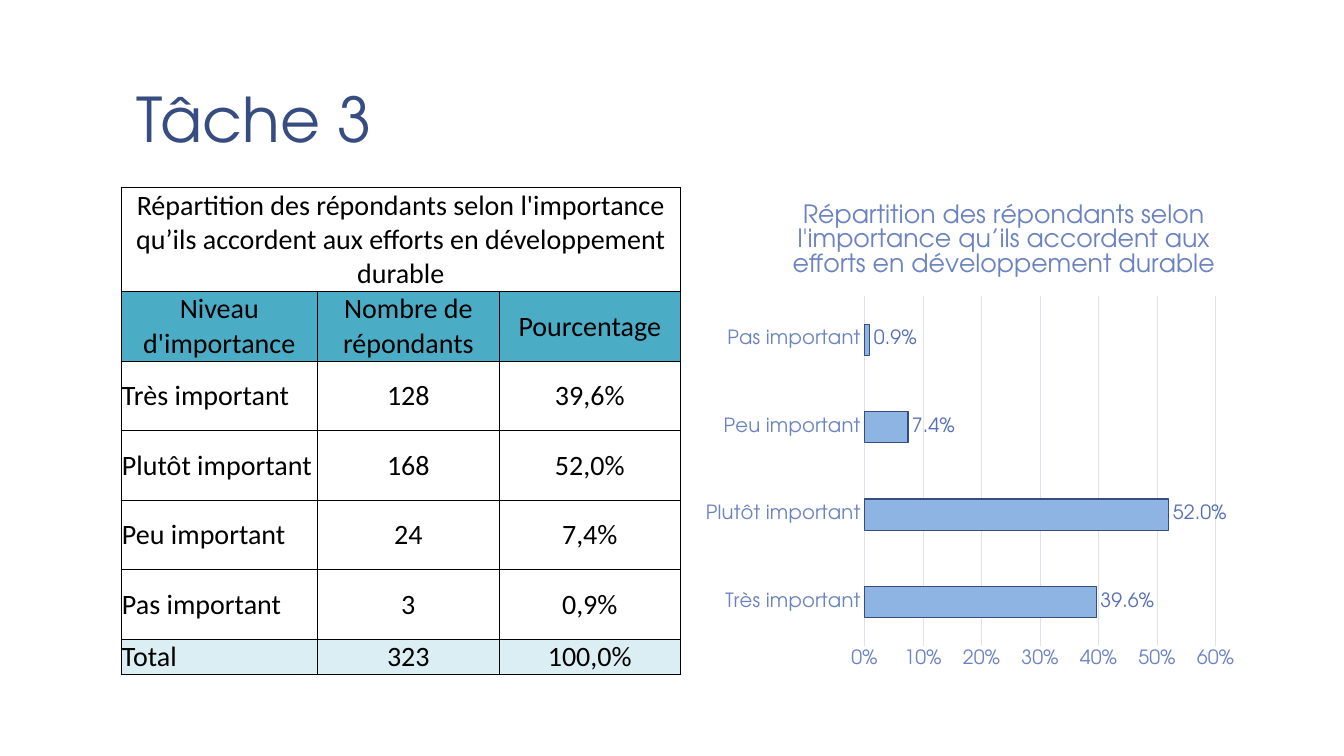
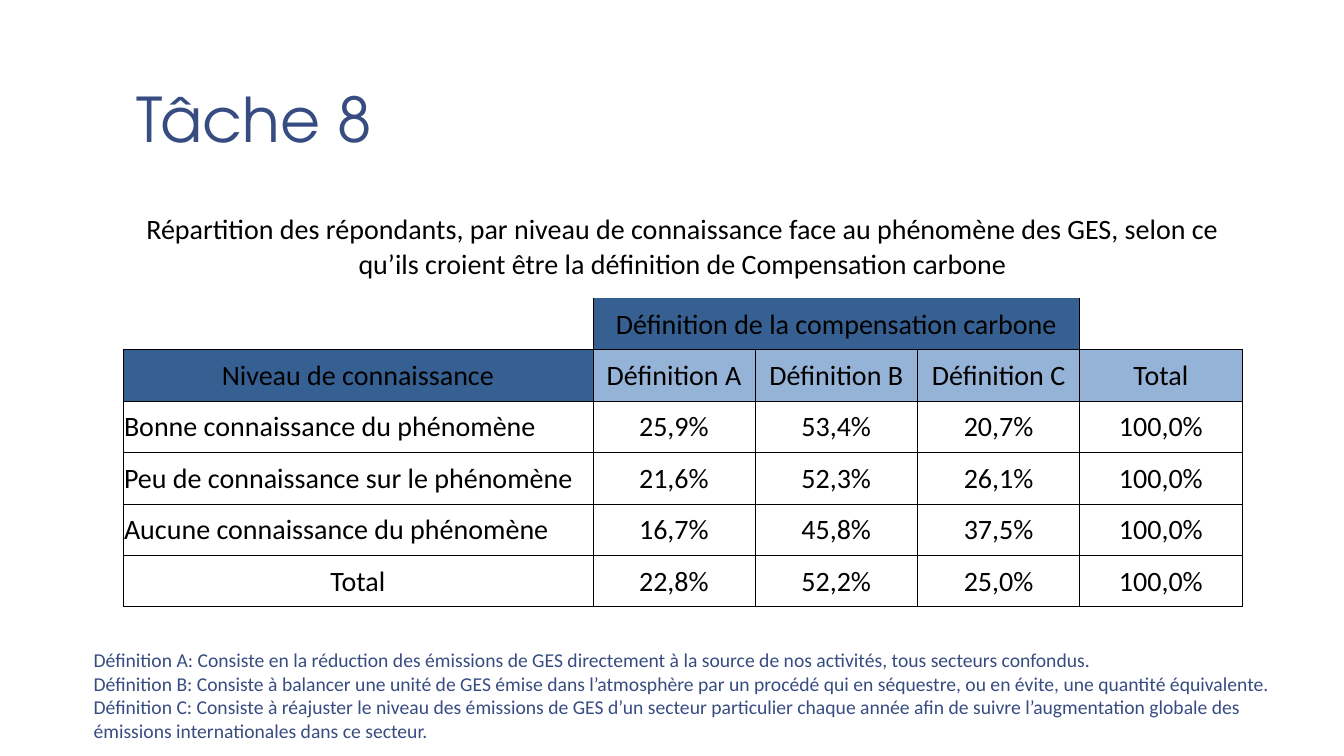
from lxml import etree
from pptx import Presentation
from pptx.chart.data import CategoryChartData
from pptx.dml.color import RGBColor
from pptx.enum.chart import XL_CHART_TYPE, XL_LABEL_POSITION, XL_TICK_MARK
from pptx.enum.text import MSO_ANCHOR, PP_ALIGN
from pptx.oxml.ns import qn
from pptx.util import Inches, Pt

BAR_CLUSTERED = XL_CHART_TYPE.BAR_CLUSTERED
OUTSIDE_END = XL_LABEL_POSITION.OUTSIDE_END
NO_TICK = XL_TICK_MARK.NONE
MIDDLE, BOTTOM = MSO_ANCHOR.MIDDLE, MSO_ANCHOR.BOTTOM
LEFT, CENTER = PP_ALIGN.LEFT, PP_ALIGN.CENTER

HEADING_FONT, BODY_FONT = "TeX Gyre Adventor", "Calibri"
NAVY, BLACK, WHITE = "374C81", "000000", "FFFFFF"
AXIS_TEXT, LABEL_TEXT, GRID, BAR = "6A83C0", "546FB6", "DDE2F0", "8EB4E3"
TEAL, PALE_TEAL = "4BACC6", "DAEEF3"
DEEP_BLUE, LIGHT_BLUE = "366092", "95B3D7"
ALL_EDGES = "LRTB"

IMPORTANCE_CAPTION = ("Répartition des répondants selon l'importance qu’ils accordent "
                      "aux efforts en développement durable")
IMPORTANCE_HEADER = ["Niveau d'importance", "Nombre de répondants", "Pourcentage"]
IMPORTANCE_ROWS = [
    ["Très important", "128", "39,6%"],
    ["Plutôt important", "168", "52,0%"],
    ["Peu important", "24", "7,4%"],
    ["Pas important", "3", "0,9%"],
]
IMPORTANCE_TOTAL = ["Total", "323", "100,0%"]
IMPORTANCE_SHARES = [0.396, 0.52, 0.074, 0.009]

KNOWLEDGE_CAPTION = ("Répartition des répondants, par niveau de connaissance face au phénomène "
                     "des GES, selon ce qu’ils croient être la définition de Compensation carbone")
KNOWLEDGE_HEADER = ["Niveau de connaissance", "Définition A", "Définition B",
                    "Définition C", "Total"]
KNOWLEDGE_ROWS = [
    ["Bonne connaissance du phénomène", "25,9%", "53,4%", "20,7%", "100,0%"],
    ["Peu de connaissance sur le phénomène", "21,6%", "52,3%", "26,1%", "100,0%"],
    ["Aucune connaissance du phénomène", "16,7%", "45,8%", "37,5%", "100,0%"],
]
KNOWLEDGE_TOTAL = ["Total", "22,8%", "52,2%", "25,0%", "100,0%"]
DEFINITIONS = [
    "Définition A: Consiste en la réduction des émissions de GES directement à la source "
    "de nos activités, tous secteurs confondus.",
    "Définition B: Consiste à balancer une unité de GES émise dans l’atmosphère par un procédé "
    "qui en séquestre, ou en évite, une quantité équivalente.",
    "Définition C: Consiste à réajuster le niveau des émissions de GES d’un secteur particulier "
    "chaque année afin de suivre l’augmentation globale des émissions internationales "
    "dans ce secteur.",
]


def rgb(color):
    return RGBColor.from_string(color)


def style_font(font, name, size, color):
    font.name, font.size, font.bold = name, Pt(size), False
    font.color.rgb = rgb(color)


def add_text(slide, box, lines, font_name, size, color):
    frame = slide.shapes.add_textbox(*map(Inches, box)).text_frame
    frame.word_wrap = True
    frame.text = "\n".join(lines)
    for paragraph in frame.paragraphs:
        style_font(paragraph.font, font_name, size, color)
    return frame


def add_titled_slide(prs, title):
    slide = prs.slides.add_slide(prs.slide_layouts[6])
    frame = add_text(slide, (1.22, 0.08, 11.11, 1.53), [title], HEADING_FONT, 44, NAVY)
    frame.vertical_anchor = BOTTOM
    frame.margin_left = frame.margin_right = Inches(0.13)
    frame.margin_top = frame.margin_bottom = Inches(0.07)
    frame.paragraphs[0].line_spacing = 0.85
    return slide


def set_borders(cell, edges):
    """Draw a thin black line on the given edges and none on the others."""
    properties = cell._tc.get_or_add_tcPr()
    for index, edge in enumerate(ALL_EDGES):
        line = etree.Element(qn(f"a:ln{edge}"), w=str(Pt(0.5)))
        if edge in edges:
            fill = etree.SubElement(line, qn("a:solidFill"))
            etree.SubElement(fill, qn("a:srgbClr"), val=BLACK)
        else:
            etree.SubElement(line, qn("a:noFill"))
        properties.insert(index, line)


def add_grid(slide, left, top, widths, heights):
    """Add a plain table without any banding."""
    table = slide.shapes.add_table(
        len(heights), len(widths), Inches(left), Inches(top),
        Inches(sum(widths)), Inches(sum(heights))).table
    table.first_row = table.horz_banding = False
    for column, width in zip(table.columns, widths):
        column.width = Inches(width)
    for row, height in zip(table.rows, heights):
        row.height = Inches(height)
    return table


def fill_cell(cell, text, fill=None, align=CENTER, edges=ALL_EDGES):
    cell.margin_left = cell.margin_right = cell.margin_top = Inches(0.01)
    cell.margin_bottom = 0
    cell.vertical_anchor = MIDDLE
    if fill:
        cell.fill.solid()
        cell.fill.fore_color.rgb = rgb(fill)
    else:
        cell.fill.background()
    set_borders(cell, edges)
    if text:
        paragraph = cell.text_frame.paragraphs[0]
        paragraph.text = text
        paragraph.alignment = align
        style_font(paragraph.font, BODY_FONT, 20, BLACK)


def fill_row(table, row, texts, fills, first_align=CENTER):
    for column, (text, fill) in enumerate(zip(texts, fills)):
        fill_cell(table.cell(row, column), text, fill, CENTER if column else first_align)


def fill_span(table, row, first, last, text, fill=None, edges=ALL_EDGES):
    """Merge the cells of a row from first to last and fill them."""
    table.cell(row, first).merge(table.cell(row, last))
    for column in range(first, last + 1):
        fill_cell(table.cell(row, column), text if column == first else "", fill, edges=edges)


def set_layout(parent, index, **settings):
    """Place a chart part by fractions of the chart's size."""
    for old in parent.findall(qn("c:layout")):
        parent.remove(old)
    layout = etree.Element(qn("c:layout"))
    manual = etree.SubElement(layout, qn("c:manualLayout"))
    for name, value in settings.items():
        etree.SubElement(manual, qn(f"c:{name}"), val=str(value))
    parent.insert(index, layout)


def add_importance_chart(slide):
    data = CategoryChartData(number_format="0.0%")
    data.categories = [row[0] for row in IMPORTANCE_ROWS]
    data.add_series("Series 1", IMPORTANCE_SHARES)
    box = map(Inches, (6.89, 1.86, 5.44, 4.89))
    chart = slide.shapes.add_chart(BAR_CLUSTERED, *box, data).chart
    style_font(chart.font, HEADING_FONT, 14, NAVY)
    chart.has_legend = False

    heading = chart.chart_title.text_frame
    heading.text = IMPORTANCE_CAPTION
    style_font(heading.paragraphs[0].runs[0].font, HEADING_FONT, 18, AXIS_TEXT)
    chart.chart_title.include_in_layout = False
    set_layout(chart.element.find(".//" + qn("c:title")), 1,
               xMode="edge", yMode="edge", x=0.17, y=0.02)
    set_layout(chart.element.find(".//" + qn("c:plotArea")), 0,
               layoutTarget="inner", xMode="edge", yMode="edge",
               x=0.31, y=0.22, w=0.64, h=0.71)

    levels, shares = chart.category_axis, chart.value_axis
    for axis in (levels, shares):
        axis.major_tick_mark = axis.minor_tick_mark = NO_TICK
        style_font(axis.tick_labels.font, HEADING_FONT, 14, AXIS_TEXT)
    shares.minimum_scale, shares.maximum_scale, shares.major_unit = 0, 0.6, 0.1
    shares.tick_labels.number_format = "0%"
    shares.tick_labels.number_format_is_linked = False
    shares.format.line.fill.background()
    for line in (levels.format.line, shares.major_gridlines.format.line):
        line.color.rgb = rgb(GRID)
        line.width = Pt(0.75)

    plot = chart.plots[0]
    plot.gap_width = 182
    plot.vary_by_categories = False
    bars = plot.series[0].format
    bars.fill.solid()
    bars.fill.fore_color.rgb = rgb(BAR)
    bars.line.color.rgb = rgb(NAVY)
    bars.line.width = Pt(0.75)
    plot.has_data_labels = True
    labels = plot.data_labels
    labels.show_value = True
    labels.position = OUTSIDE_END
    labels.number_format = "0.0%"
    labels.number_format_is_linked = False
    style_font(labels.font, HEADING_FONT, 14, LABEL_TEXT)


def build_importance_slide(prs):
    slide = add_titled_slide(prs, "Tâche 3")
    table = add_grid(slide, 1.2, 1.86, [1.95, 1.8, 1.8], [1.03] + [0.69] * 5 + [0.35])
    fill_span(table, 0, 0, 2, IMPORTANCE_CAPTION, WHITE)
    fill_row(table, 1, IMPORTANCE_HEADER, [TEAL] * 3)
    for row, texts in enumerate(IMPORTANCE_ROWS, start=2):
        fill_row(table, row, texts, [WHITE] * 3, LEFT)
    fill_row(table, 6, IMPORTANCE_TOTAL, [PALE_TEAL] * 3, LEFT)
    add_importance_chart(slide)


def build_knowledge_slide(prs):
    slide = add_titled_slide(prs, "Tâche 8")
    add_text(slide, (0.83, 6.38, 11.89, 1.04), DEFINITIONS, BODY_FONT, 14, NAVY)
    table = add_grid(slide, 1.22, 1.94, [4.66] + [1.61] * 4, [1.02] + [0.51] * 6)
    fill_span(table, 0, 0, 4, KNOWLEDGE_CAPTION, edges="")
    fill_cell(table.cell(1, 0), "", edges="RB")
    fill_span(table, 1, 1, 3, "Définition de la compensation carbone", DEEP_BLUE, "LRB")
    fill_cell(table.cell(1, 4), "", edges="LB")
    fill_row(table, 2, KNOWLEDGE_HEADER, [DEEP_BLUE] + [LIGHT_BLUE] * 4)
    for row, texts in enumerate(KNOWLEDGE_ROWS, start=3):
        fill_row(table, row, texts, [WHITE] * 5, LEFT)
    fill_row(table, 6, KNOWLEDGE_TOTAL, [None] * 5)


def main():
    prs = Presentation()
    prs.slide_width, prs.slide_height = Inches(13.33), Inches(7.5)
    build_importance_slide(prs)
    build_knowledge_slide(prs)
    prs.save("out.pptx")


if __name__ == "__main__":
    main()
